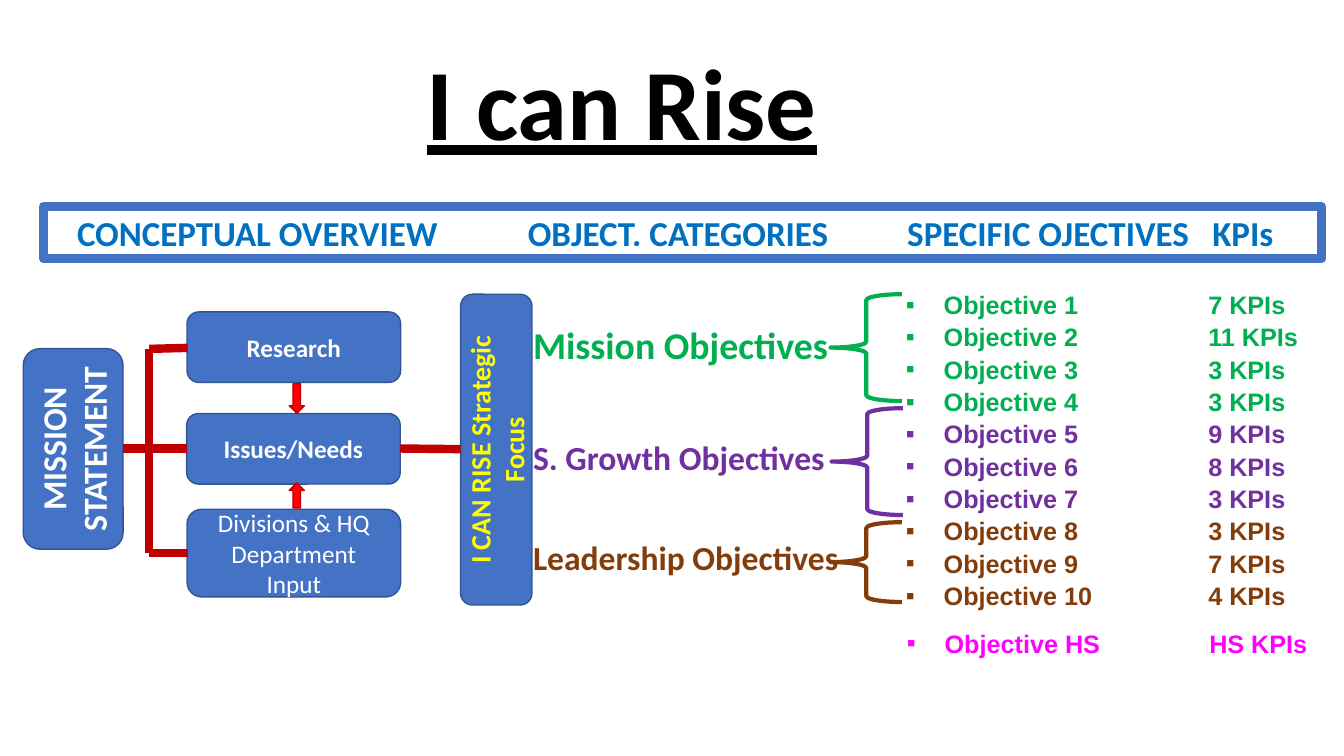
from dataclasses import dataclass
from lxml import etree
from pptx import Presentation
from pptx import util as u
from pptx.dml.color import RGBColor
from pptx.enum import shapes, text
from pptx.oxml.ns import qn

KIND = shapes.MSO_SHAPE
ALIGN = text.PP_ALIGN


@dataclass(frozen=True)
class Theme:
    head: str = "Calibri"
    body: str = "Arial"
    blue: str = "4472C4"
    edge: str = "325491"
    header: str = "0070C0"
    green: str = "00B050"
    purple: str = "7030A0"
    brown: str = "843C0B"
    pink: str = "FF00FF"
    red: str = "FF0000"
    dark_red: str = "C00000"
    yellow: str = "FFFF00"
    white: str = "FFFFFF"
    black: str = "000000"
    title_size: int = 72
    header_size: int = 25
    large_size: int = 27
    label_size: int = 24
    focus_size: int = 20
    body_size: int = 18


THEME = Theme()


def write(para, words, color, size, font=THEME.head, align=ALIGN.LEFT, **extra):
    para.alignment = align
    span = para.add_run()
    span.text = words
    formats = {"name": font, "size": u.Pt(size), "bold": True, **extra}
    for name, value in formats.items():
        setattr(span.font, name, value)
    span.font.color.rgb = RGBColor.from_string(color)


def add_text(page, box, wrap=False):
    frame = page.shapes.add_textbox(*map(u.Pt, box)).text_frame
    frame.word_wrap = wrap
    frame.auto_size = text.MSO_AUTO_SIZE.SHAPE_TO_FIT_TEXT
    return frame


def add_block(page, kind, box, line, width=1, fill=None):
    block = page.shapes.add_shape(kind, *map(u.Pt, box))
    block.shadow.inherit = False
    if fill:
        block.fill.solid()
        block.fill.fore_color.rgb = RGBColor.from_string(fill)
    else:
        block.fill.background()
    block.line.color.rgb = RGBColor.from_string(line)
    block.line.width = u.Pt(width)
    return block


def add_link(page, *ends):
    link = page.shapes.add_connector(shapes.MSO_CONNECTOR.STRAIGHT, *map(u.Pt, ends))
    link.line.color.rgb = RGBColor.from_string(THEME.dark_red)
    link.line.width = u.Pt(6)
    etree.SubElement(link._element.spPr, qn("a:effectLst"))


def add_bullet(para, words, color):
    write(para, words, color, THEME.body_size, THEME.body, ALIGN.JUSTIFY)
    para.line_spacing = 1.07
    props = para._p.get_or_add_pPr()
    for name, length in {"marL": 27, "indent": -27, "defTabSz": 72}.items():
        props.set(name, str(u.Pt(length)))
    etree.SubElement(props, qn("a:buFont")).set("typeface", THEME.body)
    etree.SubElement(props, qn("a:buChar")).set("char", "▪")


def build_objectives(page, box):
    """Bulleted objectives, with the separate one below."""
    left, top, width, height = box
    groups = [(THEME.green, (7, 11, 3, 3)), (THEME.purple, (9, 8, 3)),
              (THEME.brown, (3, 7, 4))]
    rows = [(color, count) for color, counts in groups for count in counts]
    frame = add_text(page, box, wrap=True)
    for number, (color, count) in enumerate(rows, 1):
        para = frame.paragraphs[0] if number == 1 else frame.add_paragraph()
        add_bullet(para, f"Objective {number}\t\t{count} KPIs", color)
    frame = add_text(page, (left + 0.7, top + 242, 303, 29.5))
    add_bullet(frame.paragraphs[0], "Objective HS\t\tHS KPIs", THEME.pink)


def build_categories(page, box):
    """Category labels, each with a brace towards its objectives."""
    left, top, width, height = box
    # name, colour, size, label top, brace left, brace top, brace height
    categories = [
        ("Mission Objectives", THEME.green, THEME.large_size, 16, 220, 0, 76.3),
        ("S. Growth Objectives", THEME.purple, THEME.label_size, 98.7, 220.7, 81.4, 76.3),
        ("Leadership Objectives", THEME.brown, THEME.label_size, 170, 220, 162.8, 57),
    ]
    for name, color, size, label_top, brace_left, brace_top, brace_height in categories:
        add_block(page, KIND.LEFT_BRACE,
                  (left + brace_left, top + brace_top, 51, brace_height), color, 3)
        frame = add_text(page, (left + 0.4, top + label_top, 235, size * 1.5))
        write(frame.paragraphs[0], name, color, size)


def build_title(page, box):
    frame = add_text(page, box)
    write(frame.paragraphs[0], "I can Rise", THEME.black, THEME.title_size,
          align=ALIGN.CENTER, underline=True)


def build_header(page, box):
    """Framed row of column headings, set on tab stops."""
    frame = add_block(page, KIND.RECTANGLE, box, THEME.blue, 6.5).text_frame
    frame.margin_left = u.Pt(24)
    frame.vertical_anchor = text.MSO_ANCHOR.TOP
    para = frame.paragraphs[0]
    headings = ("CONCEPTUAL OVERVIEW", "OBJECT. CATEGORIES", "SPECIFIC OJECTIVES", "KPIs")
    write(para, "\t".join(headings), THEME.header, THEME.header_size)
    tabs = etree.SubElement(para._p.get_or_add_pPr(), qn("a:tabLst"))
    for stop in (322, 593, 811):
        tab = etree.SubElement(tabs, qn("a:tab"))
        tab.set("pos", str(u.Pt(stop)))
        tab.set("algn", "l")


def build_flow(page, box):
    """Conceptual overview: mission, three inputs and the strategic focus."""
    left, top, width, height = box

    def add_card(words, x, y, w, h, color=THEME.white, size=THEME.body_size, bold=True):
        card = add_block(page, KIND.ROUNDED_RECTANGLE, (left + x, top + y, w, h),
                         THEME.edge, fill=THEME.blue)
        frame = card.text_frame
        frame.word_wrap = True
        frame.vertical_anchor = text.MSO_ANCHOR.MIDDLE
        write(frame.paragraphs[0], words, color, size, align=ALIGN.CENTER, bold=bold)
        return card

    # Cards
    add_card("Research", 117.6, 12.6, 152.6, 50.4)
    add_card("Issues/Needs", 117.3, 85.2, 152.6, 50.4)
    focus = add_card("I CAN RISE Strategic Focus", 313, 0, 51, height,
                     THEME.yellow, THEME.focus_size)
    focus.text_frame._txBody.bodyPr.set("vert", "vert270")
    inputs = add_card("Divisions & HQ Department Input", 117.6, 153.6, 152.6, 62.6,
                      bold=False)
    inputs.text_frame.margin_left = inputs.text_frame.margin_right = u.Pt(14)
    mission = add_card("MISSION STATEMENT", -35.4, 74.8, 143.3, 71.3,
                       size=THEME.label_size)
    mission.rotation = 270

    # Arrows into the middle card
    for kind, y, h in ((KIND.DOWN_ARROW, 64, 21), (KIND.UP_ARROW, 134.7, 18)):
        add_block(page, kind, (left + 190.6, top + y, 10.8, h),
                  THEME.dark_red, fill=THEME.red)

    # Bracket from the mission to the inputs, then on to the focus
    spine, first, middle, last = 90.6, 39, 110.2, 185
    for x1, y1, x2, y2 in ((71.8, middle, 117.3, middle), (118, last, spine, last),
                           (spine, middle, spine, last), (spine, first, spine, middle),
                           (spine, first, 118, first - 0.7),
                           (269.9, middle, 313, middle + 0.4)):
        add_link(page, left + x1, top + y1, left + x2, top + y2)


def main():
    deck = Presentation()
    deck.slide_width, deck.slide_height = u.Pt(960), u.Pt(540)
    page = deck.slides.add_slide(deck.slide_layouts[6])
    build_objectives(page, (640, 201.6, 308, 240.5))
    build_categories(page, (373.3, 210.2, 271, 220))
    build_title(page, (255.6, 24.5, 377.3, 77))
    build_header(page, (31, 147.5, 913, 37.4))
    build_flow(page, (16, 210.2, 364, 222))
    deck.save("out.pptx")


if __name__ == "__main__":
    main()
